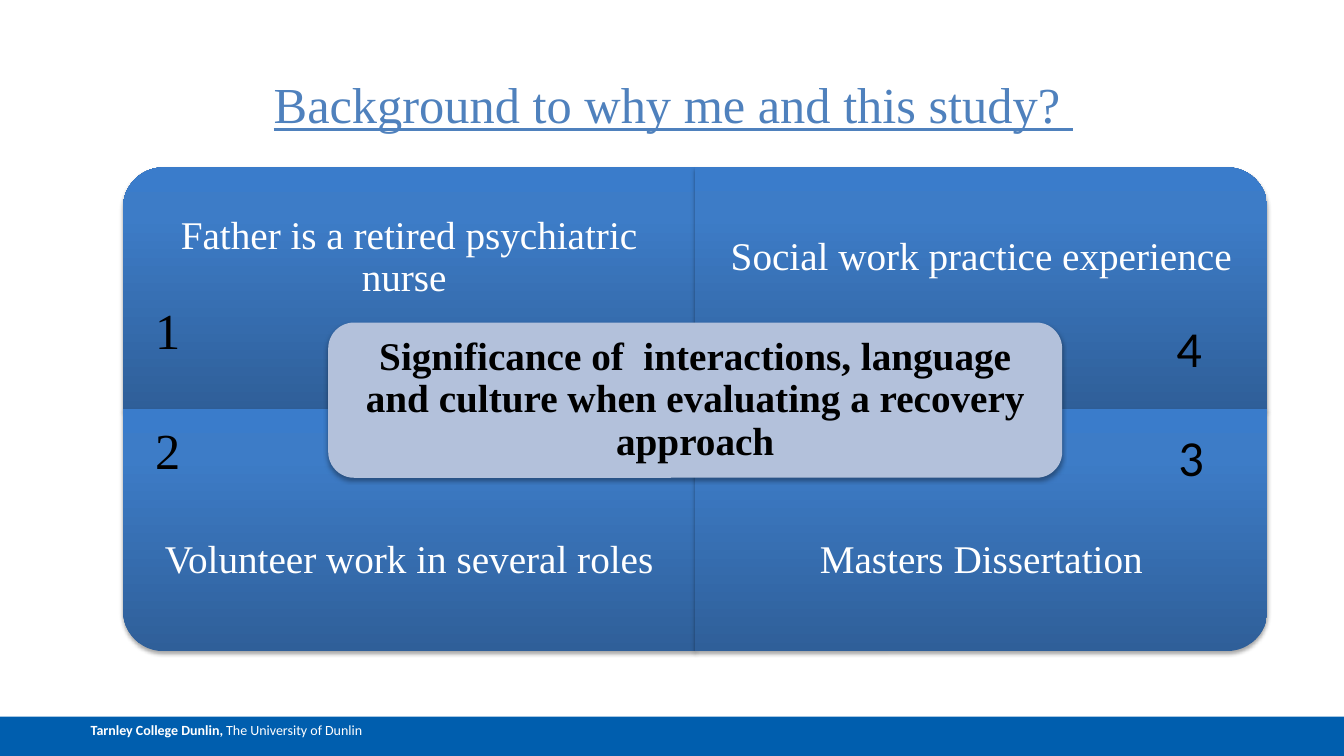
from lxml import etree
from pptx import Presentation
from pptx.dml.color import RGBColor
from pptx.enum.shapes import MSO_SHAPE
from pptx.enum.text import MSO_ANCHOR, PP_ALIGN
from pptx.oxml import parse_xml
from pptx.oxml.ns import nsdecls, qn
from pptx.util import Inches, Pt

RECTANGLE = MSO_SHAPE.RECTANGLE
ROUNDED = MSO_SHAPE.ROUNDED_RECTANGLE
ONE_ROUND_CORNER = MSO_SHAPE.ROUND_1_RECTANGLE
LEFT, CENTER = PP_ALIGN.LEFT, PP_ALIGN.CENTER
TOP, MIDDLE, BOTTOM = MSO_ANCHOR.TOP, MSO_ANCHOR.MIDDLE, MSO_ANCHOR.BOTTOM

WIDTH, HEIGHT = 13.33, 7.5
SERIF, SANS = "Times New Roman", "Calibri"
WHITE, BLACK = "FFFFFF", "000000"
TITLE_BLUE, FOOTER_BLUE, CENTER_FILL = "4F81BD", "005EAE", "B3C1DB"
PANEL_STOPS = [(0, "2F5F99"), (80, "3D7CC7"), (100, "3A7CCB")]
PANELS = [
    (0, 0, 270, "Father is a retired psychiatric nurse "),
    (1, 0, 0, "Social work practice experience"),
    (0, 1, 180, "Volunteer work in several roles"),
    (1, 1, 90, "Masters Dissertation"),
]
NUMBERS = [
    ("1", 1.44, 2.92, SERIF),
    ("2", 1.44, 4.11, SERIF),
    ("3", 11.59, 4.18, SANS),
    ("4", 11.57, 3.1, SANS),
]


def color(value):
    """Turn a hex string into a colour."""
    return RGBColor.from_string(value)


def set_frame(frame, anchor, margins):
    """Set wrapping, anchor and the side and top margins of a text frame."""
    frame.word_wrap = True
    frame.vertical_anchor = anchor
    frame.margin_left = frame.margin_right = Inches(margins[0])
    frame.margin_top = frame.margin_bottom = Inches(margins[1])


def add_run(para, text, size, font, ink, bold=False):
    """Add one formatted run to a paragraph."""
    span = para.add_run()
    span.text = text
    span.font.size = Pt(size)
    span.font.name = font
    span.font.bold = bold
    span.font.color.rgb = color(ink)
    return span


def add_box(page, kind, box, fill=None):
    """Add a preset shape without outline or shadow."""
    shape = page.shapes.add_shape(kind, *map(Inches, box))
    shape.shadow.inherit = False
    shape.line.fill.background()
    if fill:
        shape.fill.solid()
        shape.fill.fore_color.rgb = color(fill)
    return shape


def add_text(page, box, anchor, margins):
    """Add a text box and return its first paragraph."""
    frame = page.shapes.add_textbox(*map(Inches, box)).text_frame
    set_frame(frame, anchor, margins)
    return frame.paragraphs[0]


def add_shadow(shape):
    """Give a shape a soft shadow below it."""
    effects = shape._element.spPr.find(qn("a:effectLst"))
    shadow = etree.SubElement(
        effects, qn("a:outerShdw"), blurRad=str(Pt(3.1)), dist=str(Pt(1.8)),
        dir="5400000", rotWithShape="0")
    ink = etree.SubElement(shadow, qn("a:srgbClr"), val=BLACK)
    etree.SubElement(ink, qn("a:alpha"), val="35000")


def fill_gradient(shape, stops):
    """Fill a shape with an upward gradient that ignores its rotation."""
    marks = "".join(
        f'<a:gs pos="{share * 1000}"><a:srgbClr val="{value}"/></a:gs>'
        for share, value in stops)
    gradient = parse_xml(
        f'<a:gradFill {nsdecls("a")} rotWithShape="0"><a:gsLst>{marks}</a:gsLst>'
        '<a:lin ang="16200000" scaled="0"/></a:gradFill>')
    shape.fill.gradient()
    properties = shape._element.spPr
    properties.replace(properties.find(qn("a:gradFill")), gradient)


def add_footer(page, box):
    """Draw the footer band with its institution name."""
    band = add_box(page, RECTANGLE, box, FOOTER_BLUE)
    set_frame(band.text_frame, TOP, (0.1, 0.05))
    band.text_frame.margin_left = Inches(0.9)
    para = band.text_frame.paragraphs[0]
    para.alignment = LEFT
    add_run(para, "Tarnley College Dunlin, ", 10, SANS, WHITE, True)
    add_run(para, "The University of Dunlin", 10, SANS, WHITE)


def add_title(page, box):
    """Place and format the title placeholder."""
    title = page.shapes.title
    title.left, title.top, title.width, title.height = map(Inches, box)
    set_frame(title.text_frame, BOTTOM, (0, 0))
    para = title.text_frame.paragraphs[0]
    para.alignment = CENTER
    span = add_run(para, "Background to why me and this study? ", 36, SERIF, TITLE_BLUE)
    span.font.underline = True


def add_panel(page, box, turn, text, text_top):
    """Draw one quadrant, its round corner turned outward, with its text."""
    left, top, width, height = box
    shape_box = box
    if turn % 180:
        shape_box = (left + (width - height) / 2, top + (height - width) / 2, height, width)
    panel = add_box(page, ONE_ROUND_CORNER, shape_box)
    panel.rotation = turn
    fill_gradient(panel, PANEL_STOPS)
    add_shadow(panel)
    para = add_text(page, (left, text_top, width, height * 0.75), MIDDLE, (0.22, 0.22))
    para.alignment = CENTER
    para.line_spacing = 0.9
    add_run(para, text, 28, SERIF, WHITE)


def add_matrix(page, box):
    """Draw the four quadrants and the central statement."""
    left, top, width, height = box
    cell_width, cell_height = width / 2, height / 2
    for column, row, turn, text in PANELS:
        cell_top = top + row * cell_height
        cell = (left + column * cell_width, cell_top, cell_width, cell_height)
        add_panel(page, cell, turn, text, cell_top + row * cell_height / 4)
    center_width, center_height = 7.28, 1.54
    center_box = (left + (width - center_width) / 2, 3.2, center_width, center_height)
    center = add_box(page, ROUNDED, center_box, CENTER_FILL)
    add_shadow(center)
    set_frame(center.text_frame, MIDDLE, (0.19, 0.1))
    para = center.text_frame.paragraphs[0]
    para.alignment = CENTER
    para.line_spacing = 0.9
    statement = ("Significance of  interactions, language and culture "
                 "when evaluating a recovery approach")
    add_run(para, statement, 28, SERIF, BLACK, True)


def add_numbers(page, width, height):
    """Number the quadrants."""
    for digit, left, top, font in NUMBERS:
        para = add_text(page, (left, top, width, height), TOP, (0.1, 0.05))
        add_run(para, digit, 36, font, BLACK)


def main():
    """Build the deck and save it."""
    deck = Presentation()
    deck.slide_width, deck.slide_height = Inches(WIDTH), Inches(HEIGHT)
    page = deck.slides.add_slide(deck.slide_layouts[5])
    add_footer(page, (0, 7.11, WIDTH, 0.39))
    add_title(page, (1.21, 0.39, 10.94, 0.94))
    add_matrix(page, (1.22, 1.66, 11.35, 4.8))
    add_numbers(page, 0.7, 0.71)
    deck.save("out.pptx")


if __name__ == "__main__":
    main()
